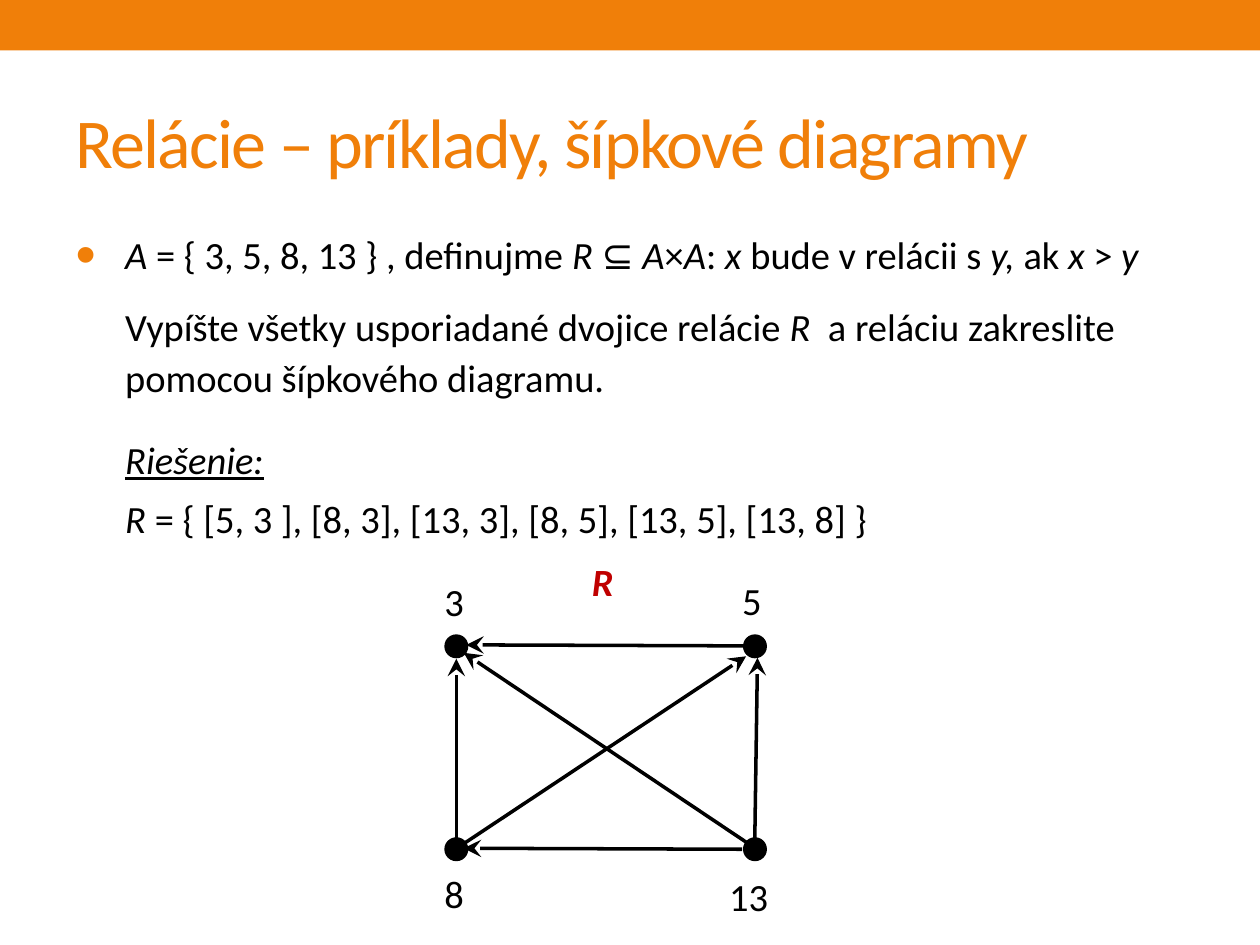
import pptx
import pptx.util
import pptx.dml.color
import pptx.enum.shapes
import pptx.enum.text
import pptx.oxml
import pptx.oxml.ns
from pptx.util import Cm

FONT = "Calibri"
ORANGE, BLACK, RED = "F07F09", "000000", "C00000"
BODY_SIZE = 22

# Body paragraphs: (space before in pt, bulleted, runs as (text, style))
BODY = [
    (4.4, True, [
        ("A", "i"), (" = { 3, 5, 8, 13 } , definujme ", ""), ("R ", "i"),
        ("⊆ ", ""), ("A", "i"), ("×", ""), ("A", "i"), (": ", ""),
        ("x ", "i"), ("bude v relácii s ", ""), ("y, ", "i"), ("ak ", ""),
        ("x ", "i"), (">", ""), (" y", "i")]),
    (12, False, [
        ("Vypíšte všetky usporiadané dvojice relácie ", ""), ("R ", "i"),
        (" a reláciu zakreslite pomocou šípkového diagramu.", "")]),
    (18, False, [("Riešenie:", "iu")]),
    (4.4, False, [
        ("R", "i"),
        (" = { [5, 3 ], [8, 3], [13, 3], [8, 5], [13, 5], [13, 8] }", "")]),
]

# Diagram, in cm
NODE_X, NODE_Y, NODE_D = (9.2, 15.22), (13.03, 17.12), 0.41
LABELS = [  # text, left, top, width, style, colour
    ("3", 8.71, 11.53, 1, "", BLACK),
    ("5", 14.71, 11.51, 1, "", BLACK),
    ("8", 8.71, 17.42, 1, "", BLACK),
    ("13", 14.45, 17.48, 1.5, "", BLACK),
    ("R", 11.68, 11.13, 1.04, "bi", RED),
]
ARROWS = [  # x1, y1, x2, y2
    (15.01, 13.02, 9.4, 13),         # 5 to 3
    (15.06, 16.99, 9.35, 13.16),     # 13 to 3
    (9.2, 16.92, 9.2, 13.28),        # 8 to 3
    (9.3, 17.04, 15.04, 13.23),      # 8 to 5
    (15.21, 17.3, 15.27, 13.26),     # 13 to 5
    (14.96, 17.12, 9.35, 17.1),      # 13 to 8
]


def rgb(code):
    return pptx.dml.color.RGBColor.from_string(code)


def place(sp, left, top, width, height):
    sp.left, sp.top, sp.width, sp.height = map(Cm, (left, top, width, height))


def add_xml(parent, tag, **attrs):
    el = pptx.oxml.ns.qn(tag)
    child = parent.makeelement(el, attrs)
    parent.append(child)
    return child


def add_run(p, text, size, color, style=""):
    r = p.add_run()
    r.text = text
    f = r.font
    f.name, f.size = FONT, pptx.util.Pt(size)
    f.color.rgb = rgb(color)
    f.bold, f.italic, f.underline = "b" in style, "i" in style, "u" in style
    return r


def add_solid(s, kind, left, top, width, height, color, line=0):
    sp = s.shapes.add_shape(kind, *map(Cm, (left, top, width, height)))
    sp.shadow.inherit = False
    sp.fill.solid()
    sp.fill.fore_color.rgb = rgb(color)
    if line:
        sp.line.color.rgb = rgb(color)
        sp.line.width = pptx.util.Pt(line)
    else:
        sp.line.fill.background()


def fill_title(s):
    sp = s.shapes.title
    place(sp, 1.27, 1.47, 22.86, 2.74)
    tf = sp.text_frame
    tf.auto_size = pptx.enum.text.MSO_AUTO_SIZE.NONE
    tf.vertical_anchor = pptx.enum.text.MSO_ANCHOR.MIDDLE
    p = tf.paragraphs[0]
    p.alignment = pptx.enum.text.PP_ALIGN.LEFT
    r = add_run(p, "Relácie – príklady, šípkové diagramy", 40, ORANGE)
    r.font._element.set("spc", "-100")


def set_bullet(p, bulleted):
    pPr = p._p.get_or_add_pPr()
    pPr.set("marL", str(Cm(1)))
    pPr.set("indent", str(Cm(-1) if bulleted else 0))
    if bulleted:
        add_xml(add_xml(pPr, "a:buClr"), "a:srgbClr", val=ORANGE)
        add_xml(pPr, "a:buSzPct", val="150000")
        add_xml(pPr, "a:buFont", typeface="Arial")
        add_xml(pPr, "a:buChar", char="•")
    else:
        add_xml(pPr, "a:buNone")


def fill_body(s):
    sp = s.placeholders[1]
    place(sp, 1.27, 4.44, 23.83, 6.6)
    tf = sp.text_frame
    tf.auto_size = pptx.enum.text.MSO_AUTO_SIZE.NONE
    for i, (before, bulleted, runs) in enumerate(BODY):
        p = tf.add_paragraph() if i else tf.paragraphs[0]
        p.line_spacing = 1.1
        p.space_before = pptx.util.Pt(before)
        set_bullet(p, bulleted)
        for text, style in runs:
            add_run(p, text, BODY_SIZE, BLACK, style)


def add_label(s, text, left, top, width, style, color):
    sp = s.shapes.add_textbox(*map(Cm, (left, top, width, 1.19)))
    tf = sp.text_frame
    tf.word_wrap = True
    tf.auto_size = pptx.enum.text.MSO_AUTO_SIZE.SHAPE_TO_FIT_TEXT
    add_run(tf.paragraphs[0], text, BODY_SIZE, color, style)


def add_arrow(s, *ends):
    sp = s.shapes.add_connector(
        pptx.enum.shapes.MSO_CONNECTOR.STRAIGHT, *map(Cm, ends))
    sp.line.color.rgb = rgb(BLACK)
    sp.line.width = pptx.util.Pt(2)
    add_xml(sp.line._get_or_add_ln(), "a:tailEnd", type="stealth",
            w="lg", len="lg")
    add_xml(sp._element.spPr, "a:effectLst")


def main():
    prs = pptx.Presentation()
    prs.slide_width, prs.slide_height = Cm(25.4), Cm(19.05)
    s = prs.slides.add_slide(prs.slide_layouts[1])
    shapes = pptx.enum.shapes.MSO_SHAPE

    # Top band and text
    add_solid(s, shapes.RECTANGLE, 0, 0, 25.4, 1.02, ORANGE)
    fill_title(s)
    fill_body(s)

    # Arrow diagram
    for x in NODE_X:
        for y in NODE_Y:
            add_solid(s, shapes.OVAL, x - NODE_D / 2, y - NODE_D / 2,
                      NODE_D, NODE_D, BLACK, 2.08)
    for label in LABELS:
        add_label(s, *label)
    for ends in ARROWS:
        add_arrow(s, *ends)

    prs.save("out.pptx")


if __name__ == "__main__":
    main()
